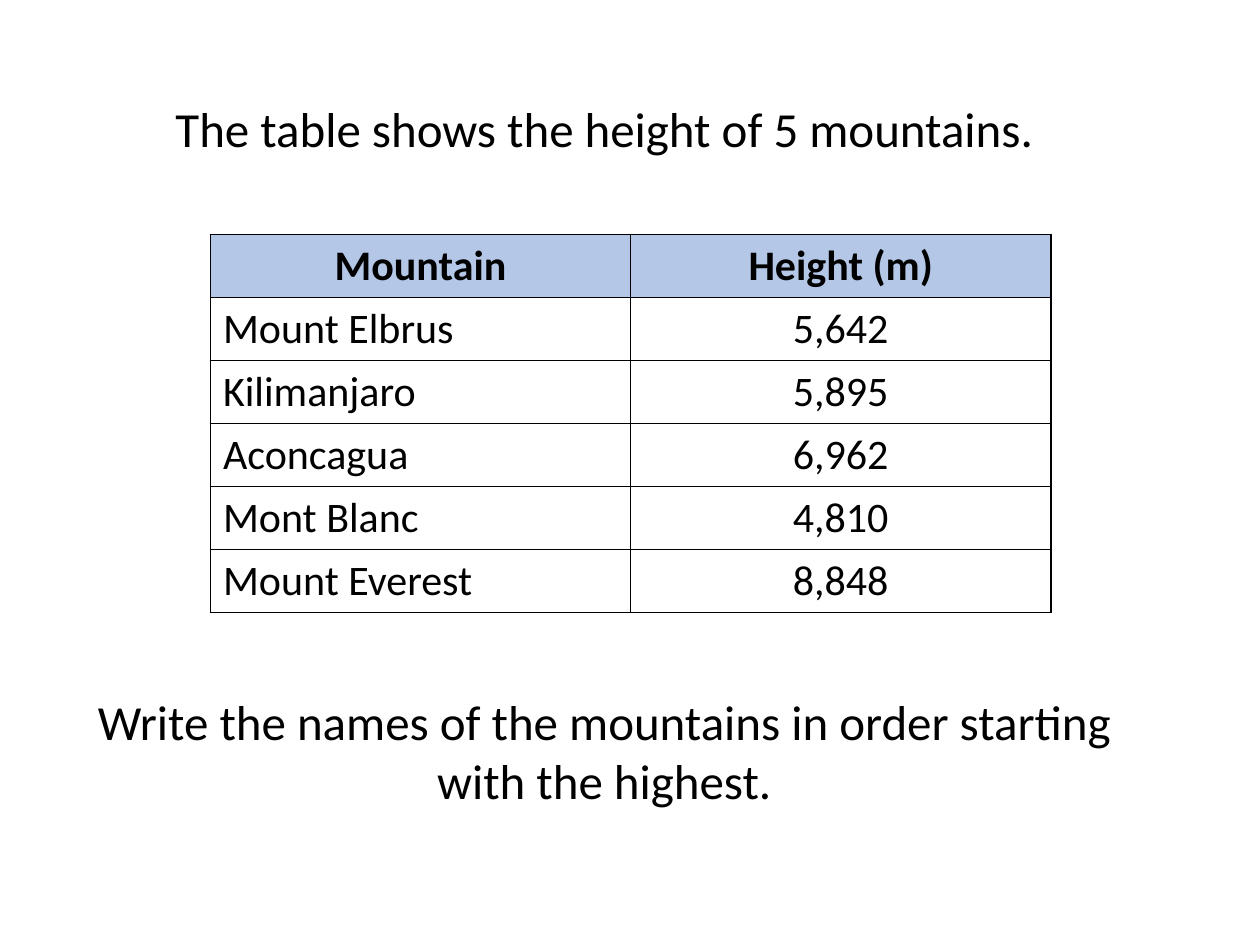
from lxml import etree
from pptx import Presentation
from pptx.dml.color import RGBColor
from pptx.enum.text import MSO_AUTO_SIZE, PP_ALIGN
from pptx.oxml.ns import qn
from pptx.util import Inches, Pt

BLACK = RGBColor(0x00, 0x00, 0x00)
WHITE = RGBColor(0xFF, 0xFF, 0xFF)
HEADER_BLUE = RGBColor(0xB4, 0xC7, 0xE7)
LEFT, CENTER = PP_ALIGN.LEFT, PP_ALIGN.CENTER
FIT_SHAPE = MSO_AUTO_SIZE.SHAPE_TO_FIT_TEXT


def write_text(frame, text, size=24, bold=False, align=CENTER):
    paragraph = frame.paragraphs[0]
    paragraph.alignment = align
    run = paragraph.add_run()
    run.text = text
    run.font.name = "Calibri"
    run.font.size = Pt(size)
    run.font.bold = bold
    run.font.color.rgb = BLACK


def add_borders(cell):
    properties = cell._tc.get_or_add_tcPr()
    for position, side in enumerate(("lnL", "lnR", "lnT", "lnB")):
        line = etree.Element(qn(f"a:{side}"), w=str(Pt(1)))
        fill = etree.SubElement(line, qn("a:solidFill"))
        etree.SubElement(fill, qn("a:srgbClr"), val=str(BLACK))
        properties.insert(position, line)


prs = Presentation()
prs.slide_width, prs.slide_height = Inches(10), Inches(7.5)
slide = prs.slides.add_slide(prs.slide_layouts[6])

# Introduction and question
for top, height, sentence in (
    (0.73, 0.57, "The table shows the height of 5 mountains."),
    (5.44, 1.04, "Write the names of the mountains in order starting with the highest."),
):
    box = slide.shapes.add_textbox(Inches(0.49), Inches(top), Inches(8.61), Inches(height))
    box.text_frame.word_wrap = True
    box.text_frame.auto_size = FIT_SHAPE
    write_text(box.text_frame, sentence, size=28)

# Table of mountain heights
mountains = [
    ("Mountain", "Height (m)"),
    ("Mount Elbrus", "5,642"),
    ("Kilimanjaro", "5,895"),
    ("Aconcagua", "6,962"),
    ("Mont Blanc", "4,810"),
    ("Mount Everest", "8,848"),
]
heights_table = slide.shapes.add_table(
    len(mountains), 2, Inches(1.67), Inches(1.86), Inches(6.67), Inches(3)
).table
for row, values in enumerate(mountains):
    is_header = row == 0
    for column, value in enumerate(values):
        cell = heights_table.cell(row, column)
        cell.fill.solid()
        cell.fill.fore_color.rgb = HEADER_BLUE if is_header else WHITE
        add_borders(cell)
        align = CENTER if is_header or column == 1 else LEFT
        write_text(cell.text_frame, value, bold=is_header, align=align)

prs.save("out.pptx")
